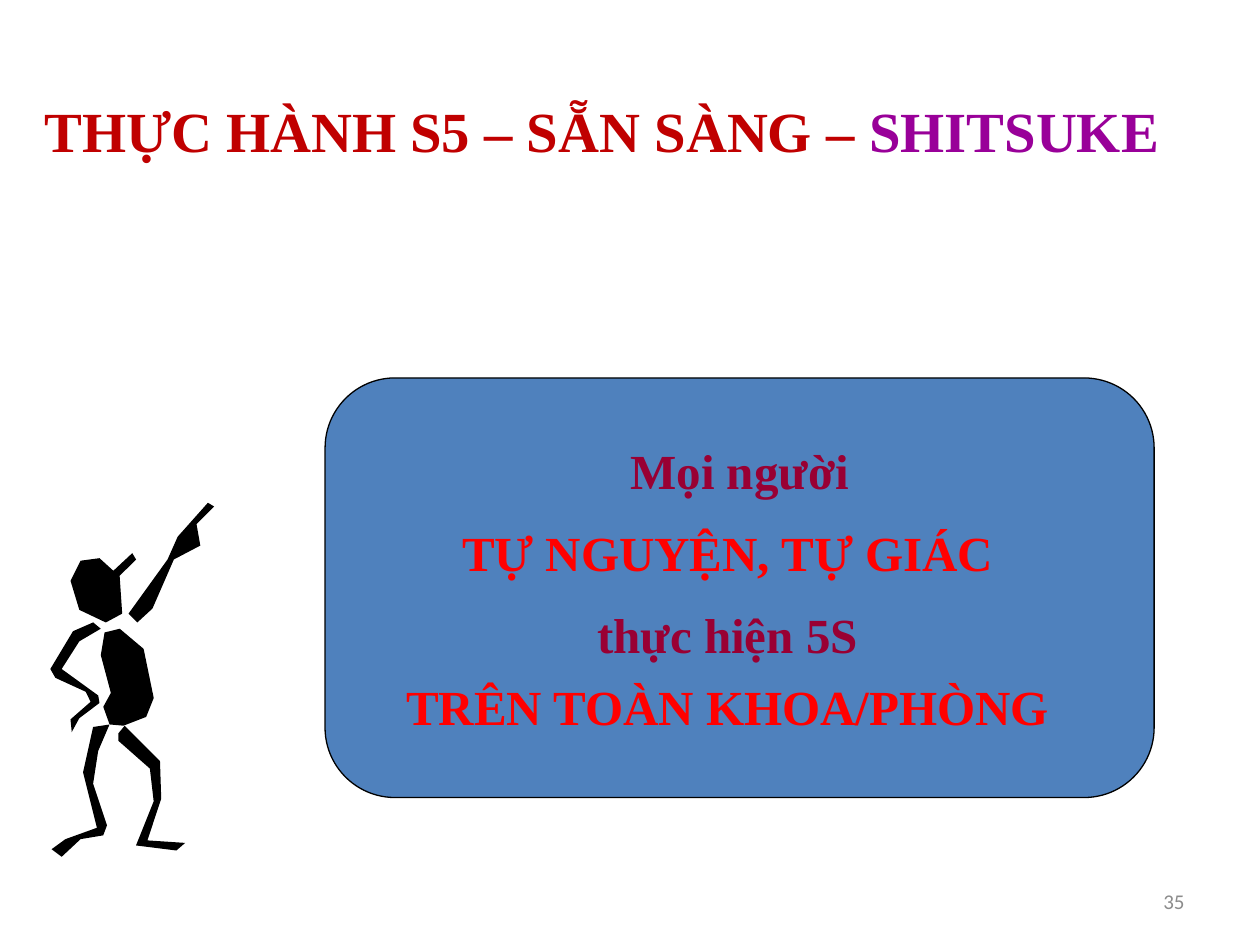
from pptx import Presentation
from pptx.dml.color import RGBColor
from pptx.enum.shapes import MSO_SHAPE
from pptx.enum.text import MSO_ANCHOR, PP_ALIGN
from pptx.util import Pt

PX = 9144

BLACK = RGBColor(0x00, 0x00, 0x00)
BLUE = RGBColor(0x4F, 0x81, 0xBD)
DARK_RED = RGBColor(0xC0, 0x00, 0x00)
PURPLE = RGBColor(0x99, 0x00, 0x99)
MAROON = RGBColor(0x99, 0x00, 0x33)
RED = RGBColor(0xFF, 0x00, 0x00)
GRAY = RGBColor(0x8C, 0x8C, 0x8C)

SERIF = "Times New Roman"
TITLE_AREA = (17, 33, 921, 133)
TITLE = [("THỰC HÀNH S5 – SẴN SÀNG – ", DARK_RED), ("SHITSUKE", PURPLE)]
NUMBER_AREA = (717, 695, 233, 40)
NUMBER = "35"
MESSAGE_AREA = (258, 300, 658, 333)
MESSAGE = [
    ("Mọi người", MAROON, 54, 0),
    ("TỰ NGUYỆN, TỰ GIÁC", RED, 47, 19),
    ("thực hiện 5S", MAROON, 47, 0),
    ("TRÊN TOÀN KHOA/PHÒNG", RED, 41, 0),
]
FIGURE = {
    "head": [
        (90, 453), (79, 443), (64, 445), (56, 461), (63, 484), (84, 494),
        (97, 487), (95, 457), (108, 444), (105, 439)],
    "raised arm": [
        (109, 494), (102, 487), (133, 444), (141, 426), (165, 399), (170, 402),
        (156, 416), (159, 433), (138, 444), (121, 483)],
    "body": [
        (83, 502), (95, 499), (114, 515), (122, 554), (116, 569), (98, 576),
        (87, 575), (82, 561), (88, 550), (80, 520)],
    "bent arm": [
        (58, 501), (74, 494), (80, 499), (63, 509), (49, 531), (78, 552),
        (79, 558), (63, 570), (57, 581), (56, 571), (72, 557), (68, 549),
        (44, 538), (40, 531)],
    "left leg": [
        (74, 577), (87, 575), (78, 596), (74, 622), (85, 655), (82, 663),
        (64, 666), (49, 680), (41, 674), (52, 666), (77, 657), (66, 613)],
    "right leg": [
        (94, 582), (99, 576), (127, 604), (128, 634), (117, 667), (147, 669),
        (140, 675), (108, 671), (122, 636), (119, 610), (94, 588)],
}


def emu(area):
    return [length * PX for length in area]


def add_run(paragraph, text, color, **font):
    run = paragraph.add_run()
    run.text = text
    run.font.color.rgb = color
    for key, value in font.items():
        setattr(run.font, key, value)


def paint(shape, color):
    shape.shadow.inherit = False
    shape.fill.solid()
    shape.fill.fore_color.rgb = color


def add_title(slide):
    title = slide.shapes.title
    title.left, title.top, title.width, title.height = emu(TITLE_AREA)
    frame = title.text_frame
    frame.vertical_anchor = MSO_ANCHOR.MIDDLE
    frame.margin_top = 12 * PX
    heading = frame.paragraphs[0]
    heading.alignment = PP_ALIGN.CENTER
    for text, color in TITLE:
        add_run(heading, text, color, name=SERIF, size=Pt(32.4), bold=True)


def add_number(slide):
    frame = slide.shapes.add_textbox(*emu(NUMBER_AREA)).text_frame
    frame.word_wrap = True
    frame.vertical_anchor = MSO_ANCHOR.MIDDLE
    number = frame.paragraphs[0]
    number.alignment = PP_ALIGN.RIGHT
    add_run(number, NUMBER, GRAY, name="Calibri", size=Pt(12))


def add_message(slide):
    panel = slide.shapes.add_shape(MSO_SHAPE.ROUNDED_RECTANGLE, *emu(MESSAGE_AREA))
    paint(panel, BLUE)
    panel.line.color.rgb = BLACK
    panel.line.width = Pt(0.75)
    frame = panel.text_frame
    frame.word_wrap = True
    frame.vertical_anchor = MSO_ANCHOR.TOP
    for index, (text, color, spacing, indent) in enumerate(MESSAGE):
        sentence = frame.add_paragraph() if index else frame.paragraphs[0]
        sentence.alignment = PP_ALIGN.CENTER
        sentence.line_spacing = Pt(spacing)
        if indent:
            sentence._p.get_or_add_pPr().set("marR", str(indent * PX))
        add_run(sentence, text, color, name=SERIF, size=Pt(28), bold=True)


def add_figure(slide):
    for outline in FIGURE.values():
        builder = slide.shapes.build_freeform(*outline[0], scale=PX)
        builder.add_line_segments(outline[1:], close=True)
        limb = builder.convert_to_shape()
        paint(limb, BLACK)
        limb.line.fill.background()


def main():
    deck = Presentation()
    deck.slide_width, deck.slide_height = emu((1000, 750))
    slide = deck.slides.add_slide(deck.slide_layouts[5])
    add_title(slide)
    add_number(slide)
    add_message(slide)
    add_figure(slide)
    deck.save("out.pptx")


if __name__ == "__main__":
    main()
